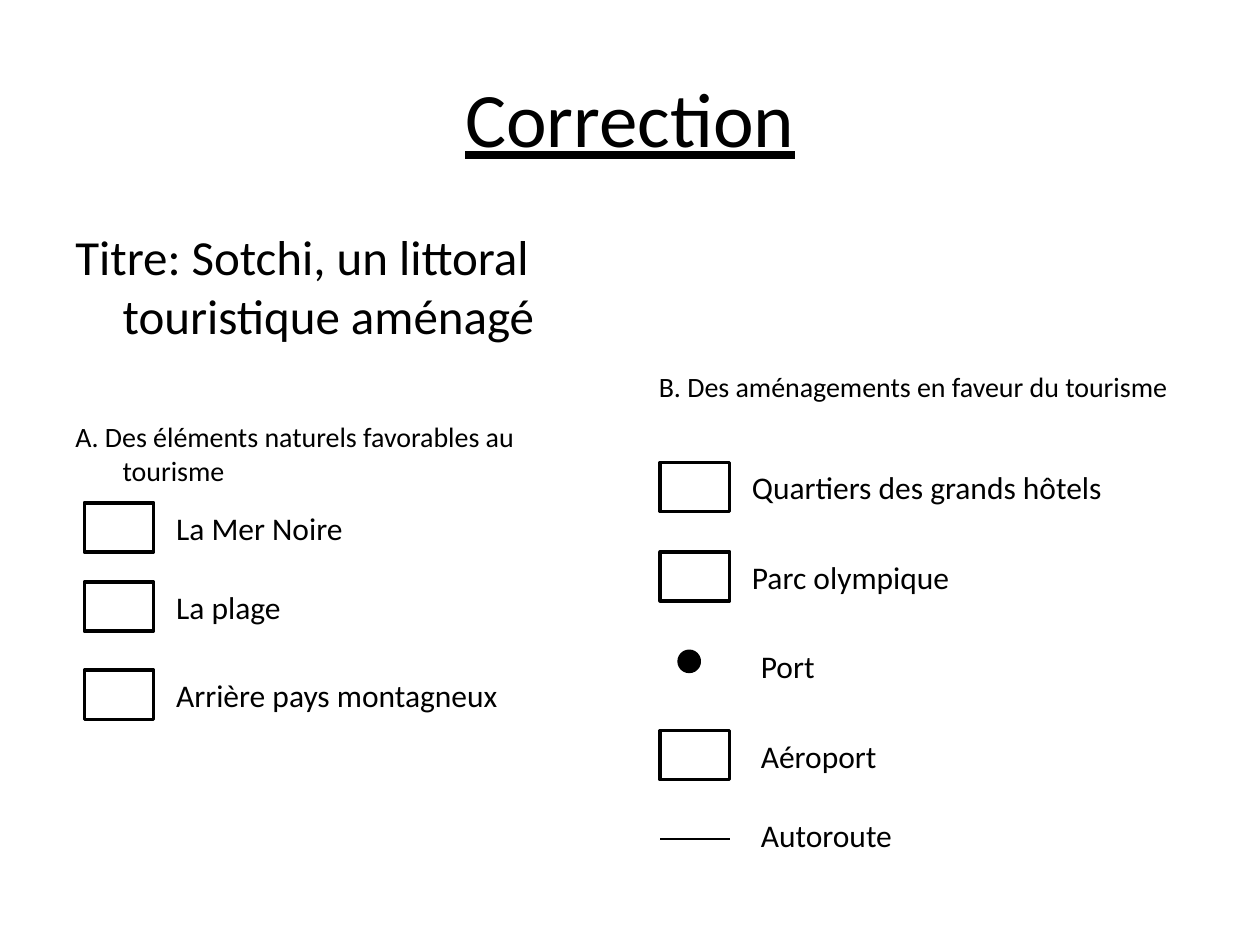
"""Build the answer slide for the Sotchi map legend."""
from dataclasses import dataclass
from enum import Enum

from lxml.etree import SubElement
from pptx import Presentation
from pptx.dml.color import RGBColor
from pptx.enum.shapes import MSO_CONNECTOR, MSO_SHAPE
from pptx.enum.text import MSO_ANCHOR, PP_ALIGN
from pptx.oxml.ns import qn
from pptx.slide import Slide
from pptx.text.text import TextFrame, _Paragraph
from pptx.util import Pt


@dataclass(frozen=True)
class Theme:
    font: str = "Calibri"
    ink: RGBColor = RGBColor(0, 0, 0)
    title_size: float = 44
    subtitle_size: float = 28
    heading_size: float = 16
    label_size: float = 18
    outline: float = 2
    road: float = 0.75


class Symbol(Enum):
    BOX = "box"
    DOT = "dot"
    LINE = "line"


@dataclass(frozen=True)
class LegendEntry:
    label: str
    symbol: Symbol
    symbol_left: float
    label_left: float
    top: float
    label_width: float


THEME = Theme()
BOX_WIDTH, BOX_HEIGHT = 39.6, 28.1
DOT_SIZE, DOT_INSET, DOT_DROP = 11.5, 10.8, 5.8
ROAD_DROP = 16.5
LABEL_HEIGHT = 28.8
NATURE_LEFT, NATURE_LABEL_LEFT = 48.2, 93.6
WORKS_LEFT, WORKS_LABEL_LEFT, WORKS_LABEL_INDENTED = 377.3, 422.6, 427.7
WORKS_TOP, WORKS_STEP = 264.2, 51.1

LEGEND = [
    LegendEntry("La Mer Noire", Symbol.BOX, NATURE_LEFT, NATURE_LABEL_LEFT, 287.3, 115.2),
    LegendEntry("La plage", Symbol.BOX, NATURE_LEFT, NATURE_LABEL_LEFT, 332.6, 79.2),
    LegendEntry("Arrière pays montagneux", Symbol.BOX, NATURE_LEFT, NATURE_LABEL_LEFT, 383, 204.5),
    LegendEntry("Quartiers des grands hôtels", Symbol.BOX, WORKS_LEFT, WORKS_LABEL_LEFT,
                WORKS_TOP, 221),
    LegendEntry("Parc olympique", Symbol.BOX, WORKS_LEFT, WORKS_LABEL_LEFT,
                WORKS_TOP + WORKS_STEP, 132.5),
    LegendEntry("Port", Symbol.DOT, WORKS_LEFT, WORKS_LABEL_INDENTED,
                WORKS_TOP + 2 * WORKS_STEP, 49.7),
    LegendEntry("Aéroport", Symbol.BOX, WORKS_LEFT, WORKS_LABEL_INDENTED,
                WORKS_TOP + 3 * WORKS_STEP, 85.7),
    LegendEntry("Autoroute", Symbol.LINE, WORKS_LEFT, WORKS_LABEL_INDENTED, 463, 94.3),
]


def add_text_frame(slide: Slide, left: float, top: float, width: float, height: float,
                   wrap: bool = False) -> TextFrame:
    shape = slide.shapes.add_textbox(Pt(left), Pt(top), Pt(width), Pt(height))
    shape.text_frame.word_wrap = wrap
    return shape.text_frame


def add_run(paragraph: _Paragraph, text: str, size: float, underline: bool = False) -> None:
    run = paragraph.add_run()
    run.text = text
    run.font.name = THEME.font
    run.font.size = Pt(size)
    run.font.color.rgb = THEME.ink
    if underline:
        run.font.underline = True


def add_title(slide: Slide) -> None:
    frame = add_text_frame(slide, 36, 21.6, 648, 90, wrap=True)
    frame.vertical_anchor = MSO_ANCHOR.MIDDLE
    paragraph = frame.paragraphs[0]
    paragraph.alignment = PP_ALIGN.CENTER
    add_run(paragraph, "Correction", THEME.title_size, underline=True)


def add_hanging_text(paragraph: _Paragraph, text: str, size: float) -> None:
    properties = paragraph._p.get_or_add_pPr()
    properties.set("marL", str(Pt(27)))
    properties.set("indent", str(Pt(-27)))
    add_run(paragraph, text, size)


def add_body(slide: Slide) -> None:
    frame = add_text_frame(slide, 36, 126, 306.7, 356.4, wrap=True)
    add_hanging_text(frame.paragraphs[0], "Titre: Sotchi, un littoral touristique aménagé",
                     THEME.subtitle_size)
    heading = frame.add_paragraph()
    heading.space_before = Pt(43)
    add_hanging_text(heading, "A. Des éléments naturels favorables au tourisme",
                     THEME.heading_size)


def add_label(slide: Slide, text: str, size: float, left: float, top: float,
              width: float, height: float) -> None:
    frame = add_text_frame(slide, left, top, width, height)
    add_run(frame.paragraphs[0], text, size)


def add_outlined_shape(slide: Slide, kind: MSO_SHAPE, left: float, top: float,
                       width: float, height: float, filled: bool) -> None:
    shape = slide.shapes.add_shape(kind, Pt(left), Pt(top), Pt(width), Pt(height))
    shape.shadow.inherit = False
    shape.line.color.rgb = THEME.ink
    shape.line.width = Pt(THEME.outline)
    if filled:
        shape.fill.solid()
        shape.fill.fore_color.rgb = THEME.ink
    else:
        shape.fill.background()


def add_road(slide: Slide, left: float, top: float) -> None:
    connector = slide.shapes.add_connector(
        MSO_CONNECTOR.STRAIGHT, Pt(left), Pt(top), Pt(left + BOX_WIDTH), Pt(top))
    connector.line.color.rgb = THEME.ink
    connector.line.width = Pt(THEME.road)
    SubElement(connector._element.spPr, qn("a:effectLst"))


def add_legend_entry(slide: Slide, entry: LegendEntry) -> None:
    left, top = entry.symbol_left, entry.top
    if entry.symbol is Symbol.BOX:
        add_outlined_shape(slide, MSO_SHAPE.RECTANGLE, left, top, BOX_WIDTH, BOX_HEIGHT, False)
    elif entry.symbol is Symbol.DOT:
        add_outlined_shape(slide, MSO_SHAPE.OVAL, left + DOT_INSET, top + DOT_DROP,
                           DOT_SIZE, DOT_SIZE, True)
    else:
        add_road(slide, left, top + ROAD_DROP)
    add_label(slide, entry.label, THEME.label_size, entry.label_left, top,
              entry.label_width, LABEL_HEIGHT)


def main() -> None:
    presentation = Presentation()
    presentation.slide_width, presentation.slide_height = Pt(720), Pt(540)
    slide = presentation.slides.add_slide(presentation.slide_layouts[6])
    add_title(slide)
    add_body(slide)
    add_label(slide, "B. Des aménagements en faveur du tourisme", THEME.heading_size,
              369.4, 207.4, 312.5, 26.6)
    for entry in LEGEND:
        add_legend_entry(slide, entry)
    presentation.save("out.pptx")


if __name__ == "__main__":
    main()
